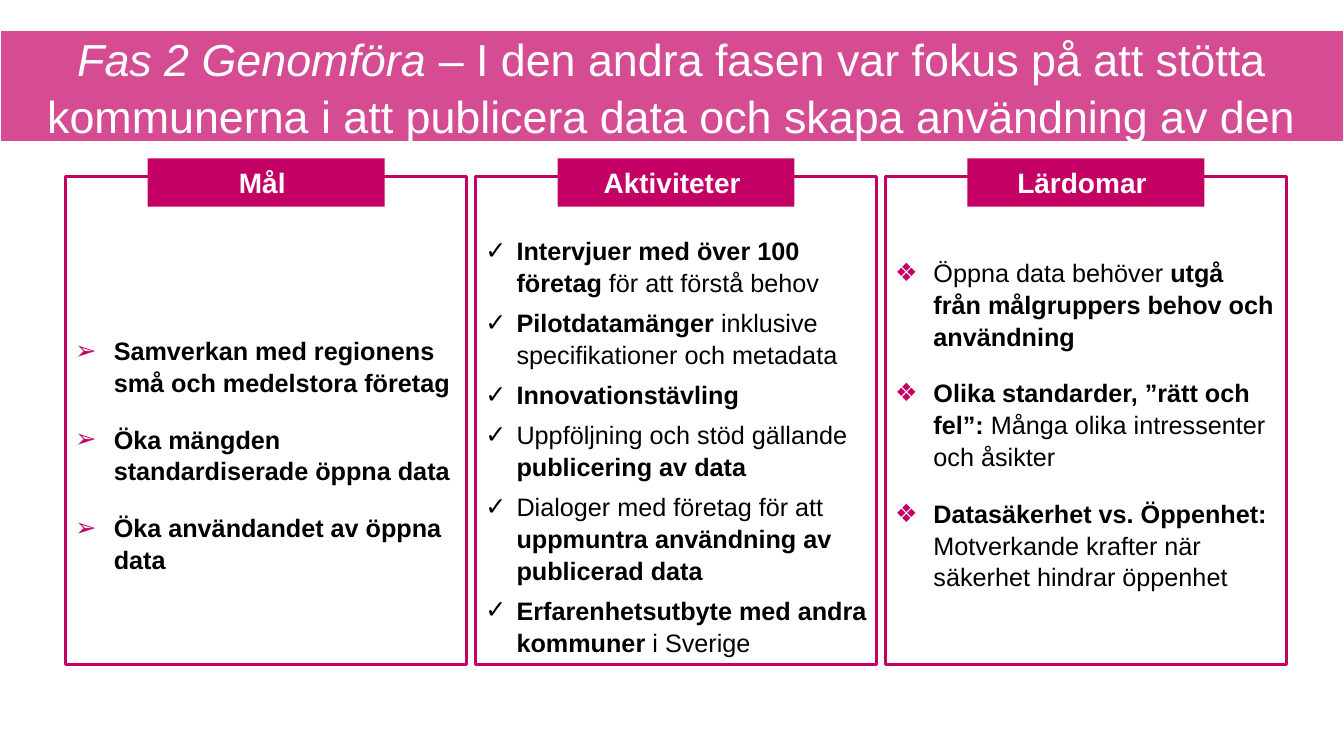
from lxml.etree import SubElement
from pptx import Presentation
from pptx.dml.color import RGBColor
from pptx.enum.shapes import MSO_SHAPE
from pptx.enum.text import MSO_ANCHOR, MSO_AUTO_SIZE, PP_ALIGN
from pptx.oxml.ns import qn
from pptx.util import Inches, Pt

PINK, WHITE, BLACK = "C40064", "FFFFFF", "000000"

# Per column: heading, bullet, bullet colour, indent, space before, top inset, items.
# Asterisks enclose bold words.
COLUMNS = [
    ("Mål ", "➢", PINK, 0.38, 18, 0.72, [
        "*Samverkan med regionens små och medelstora företag*",
        "*Öka mängden standardiserade öppna data*",
        "*Öka användandet av öppna data*",
    ]),
    ("Aktiviteter ", "✓", BLACK, 0.31, 6, 0.55, [
        "*Intervjuer med över 100 företag* för att förstå behov",
        "*Pilotdatamänger *inklusive specifikationer och metadata",
        "*Innovationstävling*",
        "Uppföljning och stöd gällande *publicering av data*",
        "Dialoger med företag för att *uppmuntra användning av publicerad data*",
        "*Erfarenhetsutbyte med andra kommuner *i Sverige",
    ]),
    ("Lärdomar ", "❖", PINK, 0.38, 18, 0.12, [
        "Öppna data behöver *utgå från målgruppers behov och användning*",
        "*Olika standarder, ”rätt och fel”: *Många olika intressenter och åsikter",
        "*Datasäkerhet vs. Öppenhet: *Motverkande krafter när säkerhet hindrar öppenhet",
    ]),
]


def color(code):
    return RGBColor.from_string(code)


def paint(shape, fill, alpha=100, line=None):
    shape.fill.solid()
    shape.fill.fore_color.rgb = color(fill)
    if alpha < 100:
        tone = shape.fill._xPr.find(".//" + qn("a:srgbClr"))
        SubElement(tone, qn("a:alpha")).set("val", str(alpha * 1000))
    if line:
        shape.line.color.rgb = color(line)
        shape.line.width = Pt(2)
    else:
        shape.line.fill.background()


def style(run, size, code, bold=False, italic=False):
    font = run.font
    font.name, font.size = "Arial", Pt(size)
    font.bold, font.italic = bold, italic
    font.color.rgb = color(code)


def frame(shape, left, top, right, bottom):
    text = shape.text_frame
    text.word_wrap = True
    text.auto_size = MSO_AUTO_SIZE.NONE
    text.vertical_anchor = MSO_ANCHOR.MIDDLE
    text.margin_left, text.margin_top = Inches(left), Inches(top)
    text.margin_right, text.margin_bottom = Inches(right), Inches(bottom)
    return text


def block(slide, x, y, w, h):
    shape = slide.shapes.add_shape(
        MSO_SHAPE.RECTANGLE, Inches(x), Inches(y), Inches(w), Inches(h))
    shape.shadow.inherit = False
    return shape


def bullet(para, mark, code, indent):
    props = para._p.get_or_add_pPr()
    props.set("marL", str(Inches(indent)))
    props.set("indent", str(-Inches(indent)))
    tone = SubElement(props, qn("a:buClr"))
    SubElement(tone, qn("a:srgbClr")).set("val", code)
    SubElement(props, qn("a:buFont")).set("typeface", "Arial")
    SubElement(props, qn("a:buChar")).set("char", mark)


def banner(slide, x, y, w, h):
    title = slide.shapes.title
    title.left, title.top = Inches(x), Inches(y)
    title.width, title.height = Inches(w), Inches(h)
    paint(title, PINK, 70, WHITE)
    para = frame(title, 0.33, 0, 0.33, 0).paragraphs[0]
    para.alignment = PP_ALIGN.CENTER
    para.line_spacing = 1.05
    parts = [
        ("Fas 2 Genomföra ", True),
        ("– I den andra fasen var fokus på att stötta kommunerna i att "
         "publicera data och skapa användning av den", False),
    ]
    for words, italic in parts:
        run = para.add_run()
        run.text = words
        style(run, 32, WHITE, italic=italic)


def panel(slide, x, y, w, h, column):
    head, mark, code, indent, space, inset, items = column

    # Framed list
    box = block(slide, x, y, w, h)
    paint(box, WHITE, 80, PINK)
    text = frame(box, 0.1, inset, 0.1, 0.05)
    for i, item in enumerate(items):
        para = text.add_paragraph() if i else text.paragraphs[0]
        bullet(para, mark, code, indent)
        para.alignment = PP_ALIGN.LEFT
        para.line_spacing = 1.05
        para.space_before = Pt(space if i else 0)
        for j, words in enumerate(item.split("*")):
            if words:
                run = para.add_run()
                run.text = words
                style(run, 18, BLACK, bold=j % 2 == 1)

    # Heading centred on the top edge
    wide = 2.35
    tag = block(slide, x + (w - wide) / 2, y - 0.18, wide, 0.48)
    paint(tag, PINK)
    para = frame(tag, 0.1, 0.05, 0.1, 0.05).paragraphs[0]
    para.text = head
    para.alignment = PP_ALIGN.CENTER
    style(para.runs[0], 20, WHITE, bold=True)


def main():
    deck = Presentation()
    deck.slide_width, deck.slide_height = Inches(13.33), Inches(7.5)
    slide = deck.slides.add_slide(deck.slide_layouts[5])
    banner(slide, 0, 0.29, 13.33, 1.12)

    # Three equal columns between the side margins
    left, right, wide = 0.65, 12.76, 3.98
    step = (right - left - wide) / (len(COLUMNS) - 1)
    for i, column in enumerate(COLUMNS):
        panel(slide, left + i * step, 1.75, wide, 4.84, column)
    deck.save("out.pptx")


if __name__ == "__main__":
    main()
